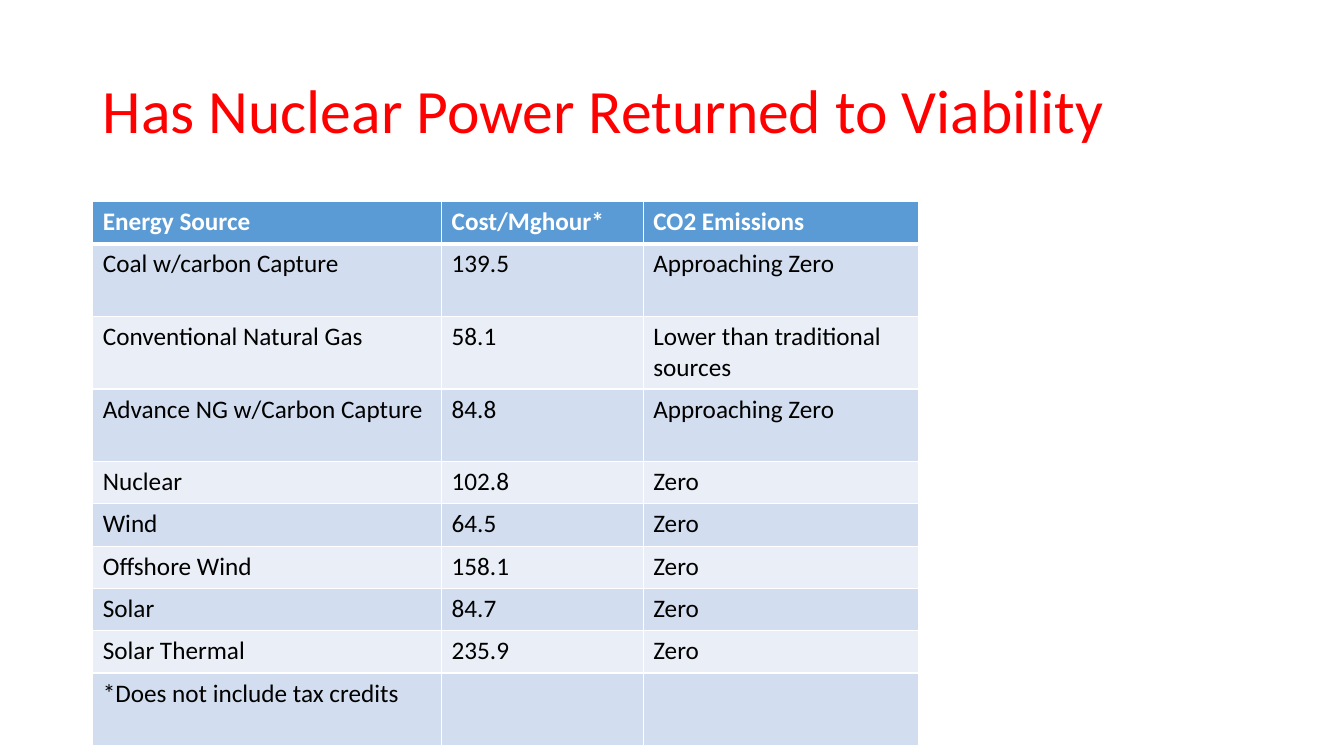
from lxml import etree
from pptx import Presentation
from pptx.dml.color import RGBColor
from pptx.enum.text import MSO_ANCHOR, PP_ALIGN
from pptx.oxml.ns import qn
from pptx.util import Inches, Pt

MIDDLE = MSO_ANCHOR.MIDDLE
LEFT = PP_ALIGN.LEFT
TITLE_ONLY = 5

FONT = "Calibri"
RED, WHITE, BLACK = "FF0000", "FFFFFF", "000000"
HEADER_FILL = "5B9BD5"
BAND_FILLS = ("EAEFF7", "D2DEEF")

COLUMN_WIDTHS = (3.46, 2, 2.73)
SINGLE_ROW, DOUBLE_ROW = 0.42, 0.72
DOUBLE_ROWS = (1, 2, 3, 9)
ENERGY_ROWS = (
    ("Energy Source", "Cost/Mghour*", "CO2 Emissions"),
    ("Coal w/carbon Capture", "139.5", "Approaching Zero"),
    ("Conventional Natural Gas", "58.1", "Lower than traditional sources"),
    ("Advance NG w/Carbon Capture", "84.8", "Approaching Zero"),
    ("Nuclear", "102.8", "Zero"),
    ("Wind", "64.5", "Zero"),
    ("Offshore Wind", "158.1", "Zero"),
    ("Solar", "84.7", "Zero"),
    ("Solar Thermal", "235.9", "Zero"),
    ("*Does not include tax credits", "", ""),
)


def color(hex_string):
    return RGBColor.from_string(hex_string)


def format_runs(paragraph, size, hex_string, bold=False):
    for run in paragraph.runs:
        run.font.name = FONT
        run.font.size = Pt(size)
        run.font.bold = bold
        run.font.color.rgb = color(hex_string)


def set_borders(cell, top=1, bottom=1):
    """Draw white cell borders; call before the fill is set."""
    properties = cell._tc.get_or_add_tcPr()
    for tag, width in (("lnL", 1), ("lnR", 1), ("lnT", top), ("lnB", bottom)):
        line = etree.SubElement(properties, qn(f"a:{tag}"), w=str(Pt(width)))
        fill = etree.SubElement(line, qn("a:solidFill"))
        etree.SubElement(fill, qn("a:srgbClr"), val=WHITE)


def add_title(slide, text, left, top, width, height):
    title = slide.shapes.title
    title.left, title.top = Inches(left), Inches(top)
    title.width, title.height = Inches(width), Inches(height)
    text_frame = title.text_frame
    text_frame.text = text
    text_frame.word_wrap = True
    text_frame.vertical_anchor = MIDDLE
    paragraph = text_frame.paragraphs[0]
    paragraph.alignment = LEFT
    paragraph.line_spacing = 0.9
    format_runs(paragraph, 44, RED)


def add_energy_table(slide, left, top):
    heights = [DOUBLE_ROW if index in DOUBLE_ROWS else SINGLE_ROW
               for index in range(len(ENERGY_ROWS))]
    table = slide.shapes.add_table(
        len(ENERGY_ROWS), len(COLUMN_WIDTHS), Inches(left), Inches(top),
        Inches(sum(COLUMN_WIDTHS)), Inches(sum(heights))).table
    for column, width in zip(table.columns, COLUMN_WIDTHS):
        column.width = Inches(width)

    for index, (row, height) in enumerate(zip(table.rows, heights)):
        row.height = Inches(height)
        is_header = index == 0
        for cell, text in zip(row.cells, ENERGY_ROWS[index]):
            # The rule below the header is thicker
            set_borders(cell, top=3 if index == 1 else 1,
                        bottom=3 if is_header else 1)
            cell.fill.solid()
            cell.fill.fore_color.rgb = color(
                HEADER_FILL if is_header else BAND_FILLS[index % 2])
            cell.text_frame.text = text
            format_runs(cell.text_frame.paragraphs[0], 18,
                        WHITE if is_header else BLACK, is_header)


def main():
    presentation = Presentation()
    presentation.slide_width = Inches(13.33)
    presentation.slide_height = Inches(7.5)
    slide = presentation.slides.add_slide(
        presentation.slide_layouts[TITLE_ONLY])

    # Heading
    add_title(slide, "Has Nuclear Power Returned to Viability",
              0.92, 0.4, 11.5, 1.45)
    # Cost and emissions by energy source
    add_energy_table(slide, 0.92, 2)

    presentation.save("out.pptx")


if __name__ == "__main__":
    main()
